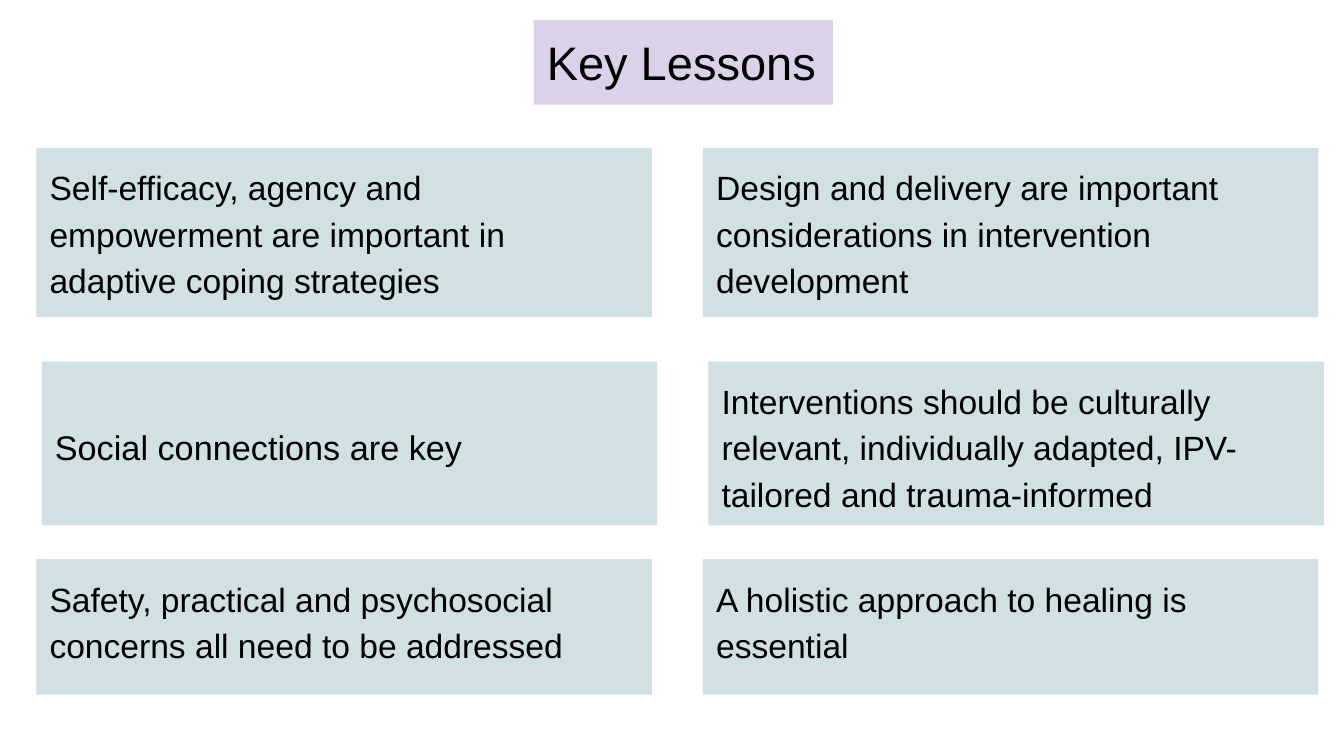
from dataclasses import dataclass

from pptx import Presentation
from pptx.dml.color import RGBColor
from pptx.enum.shapes import MSO_SHAPE
from pptx.enum.text import MSO_ANCHOR, PP_ALIGN
from pptx.util import Inches, Pt

RECTANGLE = MSO_SHAPE.RECTANGLE
TOP, MIDDLE = MSO_ANCHOR.TOP, MSO_ANCHOR.MIDDLE
LEFT = PP_ALIGN.LEFT

COLORS = {"title": "D9D2E9", "lesson": "D0E0E3", "text": "000000"}
FONT = "Arial"
SLIDE_WIDTH = 10
SLIDE_HEIGHT = SLIDE_WIDTH * 9 / 16
COLUMN_LEFT, COLUMN_STEP, CARD_WIDTH = 0.27, 4.96, 4.58
INSET = 0.1


@dataclass(frozen=True)
class Row:
    top: float
    height: float
    indent: float = 0


@dataclass(frozen=True)
class Lesson:
    column: int
    row: int
    text: str
    size: float = 18
    anchor: MSO_ANCHOR = TOP
    space_after: float = 12


ROWS = [Row(1.1, 1.26), Row(2.69, 1.22, 0.04), Row(4.16, 1.01)]

LESSONS = [
    Lesson(0, 0, "Self-efficacy, agency and empowerment are important in adaptive coping strategies"),
    Lesson(0, 1, "Social connections are key", size=18.3, anchor=MIDDLE),
    Lesson(0, 2, "Safety, practical and psychosocial concerns all need to be addressed"),
    Lesson(1, 1, "Interventions should be culturally relevant, individually adapted, IPV-tailored and trauma-informed"),
    Lesson(1, 2, "A holistic approach to healing is essential"),
    Lesson(1, 0, "Design and delivery are important considerations in intervention development", space_after=0),
]


def add_card(page, bounds: tuple, fill: str, text: str, size: float,
             anchor: MSO_ANCHOR = TOP, line_spacing: float = 1, space_after: float = 0) -> None:
    box = page.shapes.add_shape(RECTANGLE, *(Inches(length) for length in bounds))
    box.shadow.inherit = False
    box.fill.solid()
    box.fill.fore_color.rgb = RGBColor.from_string(COLORS[fill])
    box.line.fill.background()

    frame = box.text_frame
    para = frame.paragraphs[0]
    span = para.add_run()
    span.text = text
    span.font.color.rgb = RGBColor.from_string(COLORS["text"])

    margins = {f"margin_{side}": Inches(INSET) for side in ("left", "top", "right", "bottom")}
    formats = [
        (frame, {"word_wrap": True, "vertical_anchor": anchor, **margins}),
        (para, {"alignment": LEFT, "line_spacing": line_spacing, "space_after": Pt(space_after)}),
        (span.font, {"name": FONT, "size": Pt(size)}),
    ]
    for target, values in formats:
        for name, value in values.items():
            setattr(target, name, value)


def add_lesson(page, lesson: Lesson) -> None:
    row = ROWS[lesson.row]
    left = COLUMN_LEFT + lesson.column * COLUMN_STEP + row.indent
    add_card(page, (left, row.top, CARD_WIDTH, row.height), "lesson", lesson.text,
             lesson.size, lesson.anchor, 1.15, lesson.space_after)


def main() -> None:
    deck = Presentation()
    deck.slide_width, deck.slide_height = Inches(SLIDE_WIDTH), Inches(SLIDE_HEIGHT)
    page = deck.slides.add_slide(deck.slide_layouts[6])
    add_card(page, (3.97, 0.15, 2.23, 0.63), "title", "Key Lessons", 25.2)
    for lesson in LESSONS:
        add_lesson(page, lesson)
    deck.save("out.pptx")


if __name__ == "__main__":
    main()
